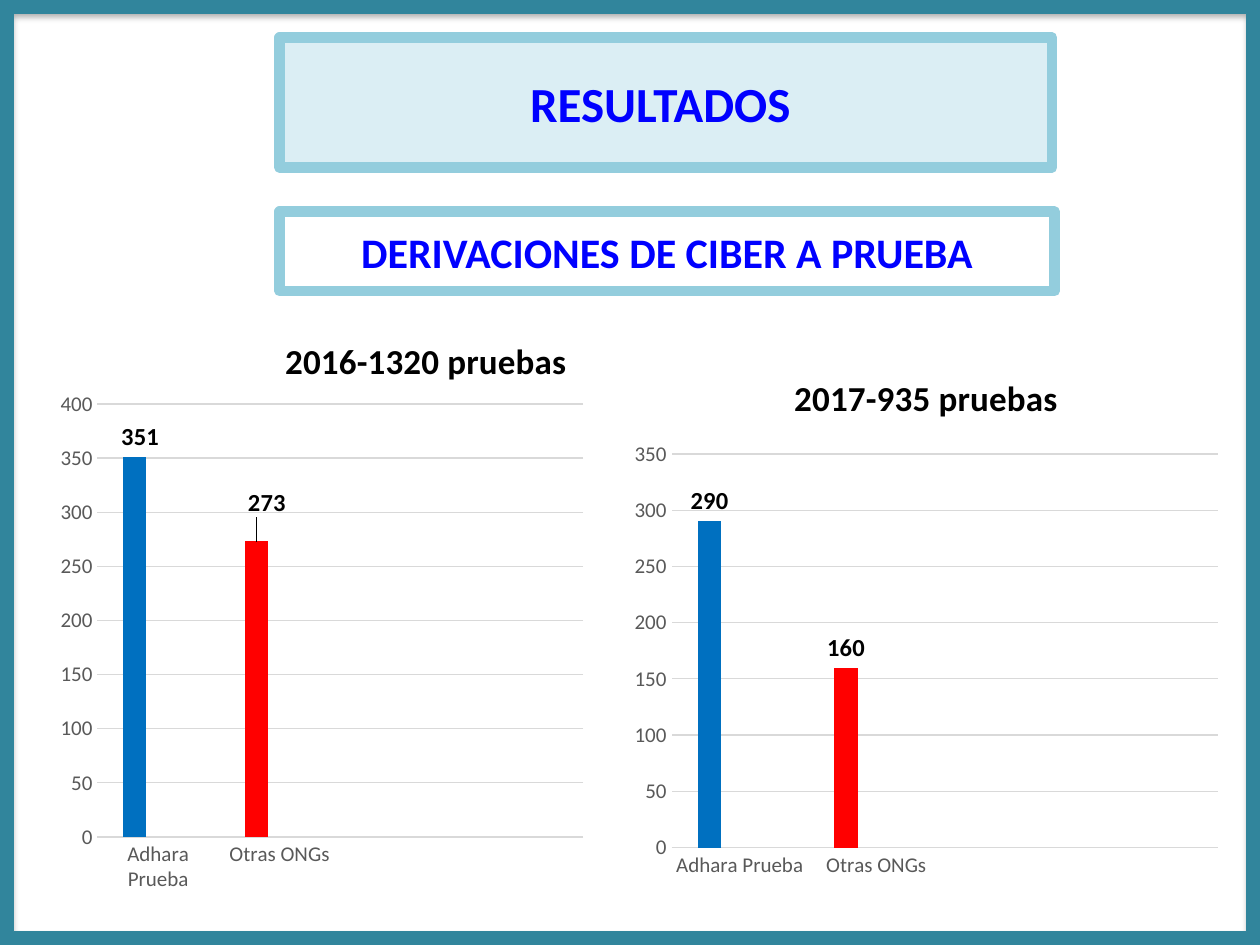
from dataclasses import dataclass

from lxml.etree import SubElement
from pptx import Presentation
from pptx.chart.data import CategoryChartData
from pptx.dml.color import RGBColor as RGB
from pptx.enum.chart import XL_CHART_TYPE as CT, XL_LABEL_POSITION as LP, XL_TICK_MARK as TM
from pptx.enum.shapes import MSO_SHAPE as SHAPE
from pptx.enum.text import MSO_ANCHOR as ANCHOR, PP_ALIGN as ALIGN
from pptx.oxml import parse_xml
from pptx.oxml.ns import nsdecls, qn
from pptx.util import Pt


@dataclass(frozen=True)
class Theme:
    font: str = "Calibri"
    frame: str = "31859C"
    border: str = "93CDDD"
    panel: str = "DBEEF4"
    heading: str = "0000FF"
    black: str = "000000"
    axis: str = "595959"
    small_label: str = "404040"
    grid: str = "D9D9D9"
    label_fill: str = "FFFFFF"
    label_line: str = "BFBFBF"
    adhara: str = "0070C0"
    others: str = "FF0000"
    series2: str = "C0504D"
    series3: str = "9BBB59"
    heading_size: int = 28
    subheading_size: int = 24
    title_size: int = 20
    label_size: int = 14
    axis_size: int = 12
    base_size: int = 10


T = Theme()
CATEGORIES = ["Adhara Prueba", "Otras ONGs", "", ""]


def set_attrs(obj, values):
    for name, value in values.items():
        setattr(obj, name, value)


def set_font(font, size, color, bold=False):
    set_attrs(font, {"name": T.font, "size": Pt(size), "bold": bold})
    font.color.rgb = RGB.from_string(color)


def set_line(line, color, width=0.75):
    line.color.rgb = RGB.from_string(color)
    line.width = Pt(width)


def set_fill(fill, color):
    fill.solid()
    fill.fore_color.rgb = RGB.from_string(color)


def add_frame(slide):
    sp = slide.shapes.add_shape(SHAPE.FRAME, 0, 0, Pt(720), Pt(540))
    sp.adjustments[0] = 0.014
    set_fill(sp.fill, T.frame)
    set_line(sp.line, T.frame)
    sp.element.spPr.append(parse_xml(
        f'<a:effectLst {nsdecls("a")}><a:outerShdw blurRad="{Pt(3.1)}" dist="{Pt(1.8)}"'
        f' dir="5400000" rotWithShape="0"><a:srgbClr val="{T.black}"><a:alpha val="35000"/>'
        '</a:srgbClr></a:outerShdw></a:effectLst>'))


def add_heading(slide, text, box, size, fill=None):
    sp = slide.shapes.add_shape(SHAPE.RECTANGLE, *map(Pt, box))
    sp.shadow.inherit = False
    if fill:
        set_fill(sp.fill, fill)
    else:
        sp.fill.background()
    set_line(sp.line, T.border, 6)
    tf = sp.text_frame
    set_attrs(tf, {"word_wrap": True, "vertical_anchor": ANCHOR.MIDDLE})
    p = tf.paragraphs[0]
    p.alignment = ALIGN.CENTER
    r = p.add_run()
    r.text = text
    set_font(r.font, size, T.heading, True)


def make_layout(**values):
    """Return a c:layout element with the given manual layout values, in schema order."""
    layout = parse_xml(f'<c:layout {nsdecls("c")}><c:manualLayout/></c:layout>')
    for name, value in values.items():
        SubElement(layout[0], qn(f"c:{name}")).set("val", str(value))
    return layout


def drop_layout(parent):
    for old in parent.findall(qn("c:layout")):
        parent.remove(old)


def place_plot(chart, x, y, w, h):
    area = chart.element.chart.plotArea
    drop_layout(area)
    area.insert(0, make_layout(layoutTarget="inner", xMode="edge", yMode="edge",
                               x=x, y=y, w=w, h=h))


def place_title(chart, x, y):
    title = chart.element.chart.find(qn("c:title"))
    drop_layout(title)
    title.find(qn("c:tx")).addnext(make_layout(xMode="edge", yMode="edge", x=x, y=y))


def box_labels(chart, offsets):
    """Frame the labels of the first series and shift each by its offset."""
    series = chart.plots[0].series[0]
    for i in range(len(offsets)):
        label = series.points[i].data_label
        set_font(label.font, T.label_size, T.black, True)
        label.position = LP.OUTSIDE_END
    labels = chart.element.xpath(".//c:ser[1]/c:dLbls/c:dLbl")
    for label, (x, y) in zip(labels, offsets):
        layout = make_layout(x=x, y=y)
        label.find(qn("c:idx")).addnext(layout)
        layout.addnext(parse_xml(
            f'<c:spPr {nsdecls("c", "a")}>'
            f'<a:solidFill><a:srgbClr val="{T.label_fill}"/></a:solidFill>'
            f'<a:ln w="{Pt(0.75)}"><a:solidFill><a:srgbClr val="{T.label_line}"/></a:solidFill>'
            '</a:ln></c:spPr>'))


def format_axes(chart, top):
    cat, val = chart.category_axis, chart.value_axis
    for axis in (cat, val):
        set_attrs(axis, {"major_tick_mark": TM.NONE, "minor_tick_mark": TM.NONE})
        set_font(axis.tick_labels.font, T.axis_size, T.axis)
    set_line(cat.format.line, T.grid)
    set_attrs(val, {"minimum_scale": 0, "maximum_scale": top, "major_unit": 50,
                    "has_major_gridlines": True})
    val.format.line.fill.background()
    set_line(val.major_gridlines.format.line, T.grid)


def format_series(plot):
    styles = [(T.others, T.label_size, T.black, True),
              (T.series2, T.axis_size, T.small_label, False),
              (T.series3, T.axis_size, T.small_label, False)]
    for series, (color, *label_font) in zip(plot.series, styles):
        set_fill(series.format.fill, color)
        labels = series.data_labels
        set_attrs(labels, {"show_value": True, "position": LP.OUTSIDE_END})
        set_font(labels.font, *label_font)
    set_fill(plot.series[0].points[0].format.fill, T.adhara)


def add_column_chart(slide, title, box, values, top, overlap=0):
    data = CategoryChartData()
    data.categories = CATEGORIES
    data.add_series("Series 1", values + [None, None])
    for n in (2, 3):
        data.add_series(f"Series {n}", [None] * len(CATEGORIES))
    chart = slide.shapes.add_chart(CT.COLUMN_CLUSTERED, *map(Pt, box), data).chart
    set_font(chart.font, T.base_size, T.black)
    set_attrs(chart, {"has_legend": False, "has_title": True})
    tf = chart.chart_title.text_frame
    tf.text = title
    set_font(tf.paragraphs[0].runs[0].font, T.title_size, T.black, True)
    chart.chart_title.include_in_layout = False
    plot = chart.plots[0]
    set_attrs(plot, {"gap_width": 219, "overlap": overlap, "vary_by_categories": False})
    format_series(plot)
    format_axes(chart, top)
    return chart


def main():
    prs = Presentation()
    set_attrs(prs, {"slide_width": Pt(720), "slide_height": Pt(540)})
    slide = prs.slides.add_slide(prs.slide_layouts[6])
    add_frame(slide)
    add_heading(slide, "DERIVACIONES DE CIBER A PRUEBA", (159.8, 121, 442.8, 45.4),
                T.subheading_size)
    add_heading(slide, "RESULTADOS ", (159.8, 21.6, 441.4, 74.2), T.heading_size, T.panel)
    chart = add_column_chart(slide, "2016-1320 pruebas", (30.2, 181.4, 307.4, 358.6),
                             [351, 273], 400)
    place_plot(chart, 0.083, 0.138, 0.903, 0.69)
    place_title(chart, 0.42, 0.02)
    box_labels(chart, [(0.01, 0), (0.02, -0.03)])
    add_column_chart(slide, "2017-935 pruebas", (355.7, 199.4, 347, 308.2),
                     [290, 160], 350, overlap=-27)
    prs.save("out.pptx")


if __name__ == "__main__":
    main()
